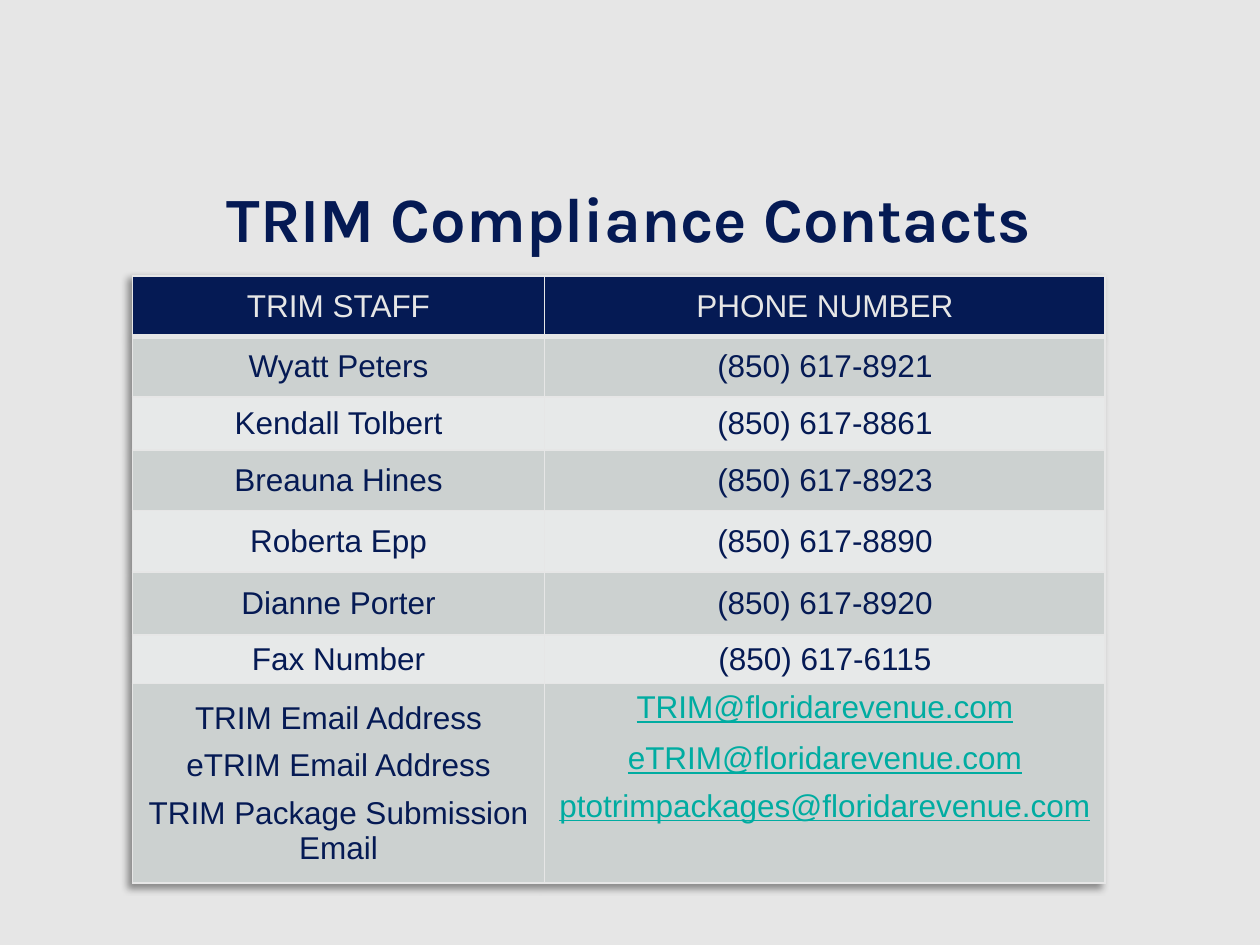
"""Build the TRIM compliance contacts slide."""
from dataclasses import dataclass

from lxml import etree
from pptx import Presentation
from pptx.dml.color import RGBColor
from pptx.enum.text import MSO_ANCHOR, PP_ALIGN
from pptx.oxml import parse_xml
from pptx.oxml.ns import qn
from pptx.util import Cm, Pt

CENTER = PP_ALIGN.CENTER
MIDDLE = MSO_ANCHOR.MIDDLE
TOP = MSO_ANCHOR.TOP
DRAWING_NS = "http://schemas.openxmlformats.org/drawingml/2006/main"


@dataclass(frozen=True)
class Theme:
    paper: str = "E6E6E6"
    navy: str = "051A54"
    teal: str = "00ACA1"
    dark_band: str = "CCD1D0"
    light_band: str = "E7E9E9"
    title_font: str = "Karla"
    table_font: str = "Arial"
    title_size: int = 36
    table_size: int = 18


THEME = Theme()


def add_text(paragraph, text, font_name, size, color):
    paragraph.alignment = CENTER
    run = paragraph.add_run()
    run.text = text
    run.font.name = font_name
    run.font.size = Pt(size)
    run.font.color.rgb = RGBColor.from_string(color)
    return run


def add_border(cell, side, width):
    properties = cell._tc.get_or_add_tcPr()
    line = etree.SubElement(properties, qn(f"a:ln{side}"), w=str(Pt(width)))
    fill = etree.SubElement(line, qn("a:solidFill"))
    etree.SubElement(fill, qn("a:srgbClr"), val=THEME.paper)


contacts = [
    ("TRIM STAFF", "PHONE NUMBER"),
    ("Wyatt Peters", "(850) 617-8921"),
    ("Kendall Tolbert", "(850) 617-8861"),
    ("Breauna Hines", "(850) 617-8923"),
    ("Roberta Epp", "(850) 617-8890"),
    ("Dianne Porter", "(850) 617-8920"),
    ("Fax Number", "(850) 617-6115"),
    (
        "TRIM Email Address\neTRIM Email Address\nTRIM Package Submission Email",
        "TRIM@floridarevenue.com\neTRIM@floridarevenue.com\nptotrimpackages@floridarevenue.com",
    ),
]
row_heights = [1.22, 1.22, 1.07, 1.22, 1.24, 1.27, 0.98, 4.02]
column_widths = [8.31, 11.3]
line_gaps = [(0, 7, 7), (0, 9, 7)]

deck = Presentation()
deck.slide_width, deck.slide_height = Cm(25.4), Cm(19.05)
slide = deck.slides.add_slide(deck.slide_layouts[5])
slide.background.fill.solid()
slide.background.fill.fore_color.rgb = RGBColor.from_string(THEME.paper)

heading = slide.shapes.title
heading.left, heading.top, heading.width, heading.height = Cm(0.74), Cm(3.2), Cm(23.88), Cm(2.36)
heading.text_frame.vertical_anchor = MIDDLE
heading_run = add_text(heading.text_frame.paragraphs[0], "TRIM Compliance Contacts",
                       THEME.title_font, THEME.title_size, THEME.navy)
heading_run.font.bold = True

directory = slide.shapes.add_table(
    len(contacts), len(column_widths), Cm(2.67), Cm(5.56),
    Cm(sum(column_widths)), Cm(sum(row_heights))).table
directory._tbl.tblPr.insert(0, parse_xml(
    f'<a:effectLst xmlns:a="{DRAWING_NS}"><a:outerShdw blurRad="50800" dist="38100" '
    'dir="8100000" algn="tr" rotWithShape="0"><a:srgbClr val="000000">'
    '<a:alpha val="40000"/></a:srgbClr></a:outerShdw></a:effectLst>'))
for column, width in zip(directory.columns, column_widths):
    column.width = Cm(width)

for row_index, (entry, height) in enumerate(zip(contacts, row_heights)):
    directory.rows[row_index].height = Cm(height)
    is_header = row_index == 0
    band = THEME.dark_band if row_index % 2 else THEME.light_band
    for column_index, content in enumerate(entry):
        cell = directory.cell(row_index, column_index)
        is_email = "@" in content
        for side in "LRTB":
            add_border(cell, side, 3 if is_header and side == "B" else 1)
        cell.fill.solid()
        cell.fill.fore_color.rgb = RGBColor.from_string(THEME.navy if is_header else band)
        cell.vertical_anchor = TOP if is_email else MIDDLE
        color = THEME.paper if is_header else THEME.teal if is_email else THEME.navy
        for line_index, (line, gap) in enumerate(zip(content.split("\n"), line_gaps[column_index])):
            frame = cell.text_frame
            paragraph = frame.add_paragraph() if line_index else frame.paragraphs[0]
            if gap:
                paragraph.space_before = Pt(gap)
            run = add_text(paragraph, line, THEME.table_font, THEME.table_size, color)
            run.font.bold = False
            run.font.underline = is_email

deck.save("out.pptx")
